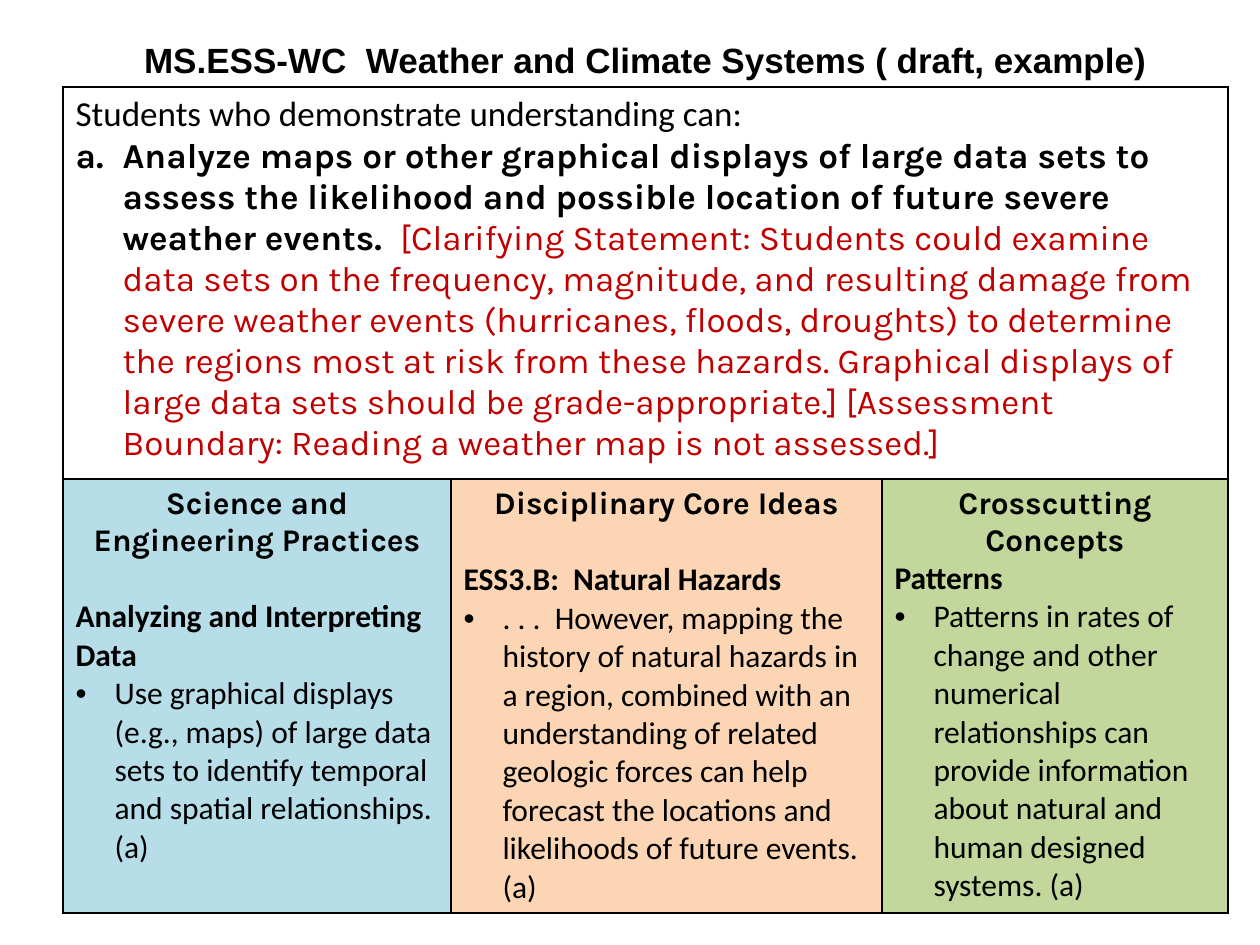
"""Build the weather and climate standards slide with its table of three dimensions."""
from lxml import etree
from pptx import Presentation
from pptx import util as u
from pptx.dml.color import RGBColor
from pptx.enum import text
from pptx.oxml.ns import qn

PX = 914400 / 126
BLACK, RED = "000000", "C00000"
BULLET = ("buChar", "char", "•")
LETTER = ("buAutoNum", "type", "alphaLcPeriod")


def px(length):
    return u.Emu(round(length * PX))


def add_paragraph(frame, runs, font, size, bold=False, centred=False, bullet=None, indent=0, before=0):
    paragraph = frame.paragraphs[0]
    if paragraph.runs:
        paragraph = frame.add_paragraph()
    paragraph.alignment = text.PP_ALIGN.CENTER if centred else text.PP_ALIGN.LEFT
    if before:
        paragraph.space_before = u.Pt(before)
    if bullet:
        tag, key, value = bullet
        properties = paragraph._p.get_or_add_pPr()
        properties.set("marL", str(px(indent)))
        properties.set("indent", str(-px(indent)))
        if tag == "buChar":
            etree.SubElement(properties, qn("a:buFont"), typeface="Arial")
        etree.SubElement(properties, qn("a:" + tag), {key: value})
    paragraph.font.name = font
    paragraph.font.size = u.Pt(size)
    for words, colour, run_bold in runs:
        run = paragraph.add_run()
        run.text = words
        run.font.name = font
        run.font.size = u.Pt(size)
        run.font.bold = bold or run_bold
        run.font.color.rgb = RGBColor.from_string(colour)


presentation = Presentation()
presentation.slide_width, presentation.slide_height = px(1260), px(945)
slide = presentation.slides.add_slide(presentation.slide_layouts[6])

table = slide.shapes.add_table(2, 3, px(63), px(87), px(1165), px(826)).table
table.first_row = table.horz_banding = False
for column, width in zip(table.columns, (388, 431, 346)):
    column.width = px(width)
for row, height in zip(table.rows, (392, 434)):
    row.height = px(height)
for cell in table.iter_cells():
    cell.fill.background()
    properties = cell._tc.get_or_add_tcPr()
    for position, side in enumerate(("lnL", "lnR", "lnT", "lnB")):
        border = etree.Element(qn("a:" + side), w=str(u.Pt(1)))
        fill = etree.SubElement(border, qn("a:solidFill"))
        etree.SubElement(fill, qn("a:srgbClr"), val=BLACK)
        properties.insert(position, border)

expectation = table.cell(0, 0)
expectation.merge(table.cell(0, 2))
add_paragraph(expectation.text_frame, [("Students who demonstrate understanding can:", BLACK, False)], "Calibri", 20)
add_paragraph(
    expectation.text_frame,
    [
        ("Analyze maps or other graphical displays of large data sets to assess the likelihood and "
         "possible location of future severe weather events.  ", BLACK, True),
        ("[Clarifying Statement: Students could examine data sets on the frequency, magnitude, and "
         "resulting damage from severe weather events (hurricanes, floods, droughts) to determine the "
         "regions most at risk from these hazards. Graphical displays of large data sets should be "
         "grade-appropriate.] [Assessment Boundary: Reading a weather map is not assessed.]", RED, False),
    ],
    "Karla", 20, bullet=LETTER, indent=47)

dimensions = [
    ("B7DEE8", "Science and Engineering Practices", "Analyzing and Interpreting Data", 22,
     "Use graphical displays (e.g., maps) of large data sets to identify temporal and spatial "
     "relationships. (a)"),
    ("FCD5B5", "Disciplinary Core Ideas", "ESS3.B:  Natural Hazards", 22,
     ". . .  However, mapping the history of natural hazards in a region, combined with an "
     "understanding of related geologic forces can help forecast the locations and likelihoods of "
     "future events. (a)"),
    ("C3D69B", "Crosscutting Concepts", "Patterns", 0,
     "Patterns in rates of change and other numerical relationships can provide information about "
     "natural and human designed systems. (a)"),
]
for index, (colour, heading, topic, gap, detail) in enumerate(dimensions):
    cell = table.cell(1, index)
    cell.fill.solid()
    cell.fill.fore_color.rgb = RGBColor.from_string(colour)
    frame = cell.text_frame
    add_paragraph(frame, [(heading, BLACK, True)], "Karla", 18, centred=True)
    add_paragraph(frame, [(topic, BLACK, True)], "Calibri", 18, before=gap)
    add_paragraph(frame, [(detail, BLACK, False)], "Calibri", 18, bullet=BULLET, indent=39)

title = slide.shapes.add_textbox(px(63), px(32), px(1165), px(55)).text_frame
title.word_wrap = True
add_paragraph(title, [("MS.ESS-WC  Weather and Climate Systems ( draft, example)", BLACK, True)],
              "Arial", 20, centred=True)

presentation.save("out.pptx")
